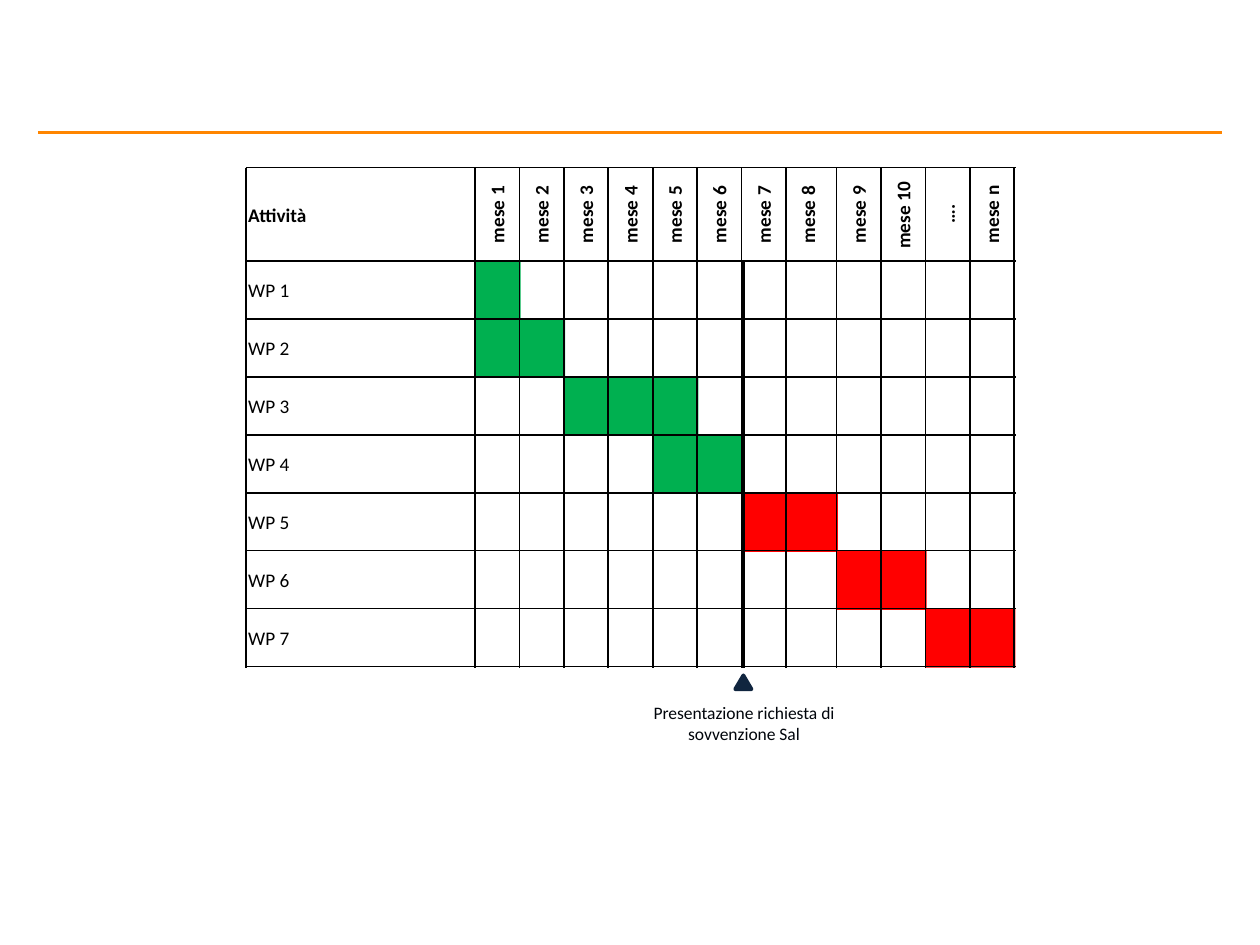
import pptx
import pptx.dml.color
import pptx.enum.shapes
import pptx.enum.text
import pptx.oxml.ns
import pptx.util
from lxml import etree

Inches = pptx.util.Inches
Pt = pptx.util.Pt
SHAPE = pptx.enum.shapes.MSO_SHAPE
ANCHOR = pptx.enum.text.MSO_ANCHOR
ALIGN = pptx.enum.text.PP_ALIGN
FIT = pptx.enum.text.MSO_AUTO_SIZE

COLORS = {
    "rule": "FF8500", "grid": "000000", "before": "00B050", "after": "FF0000",
    "marker": "10253F", "caption": "01050B", "paper": "FFFFFF",
}
FONT = "Calibri"
MONTHS = [f"mese {n}" for n in range(1, 11)] + ["….", "mese n"]
LABEL_LENGTHS = {"mese 10": 0.67, "….": 0.26}
# First and last month of each work package
SPANS = [(1, 1), (1, 2), (3, 5), (5, 6), (7, 8), (9, 10), (11, 12)]
REPORT_MONTH = 6
WIDE_MONTH, WIDE_EXTRA = 8, 0.05
ACTIVITY_WIDTH, HEADER_HEIGHT = 1.82, 0.74
HAIR = 0.01


def rgb(name):
    return pptx.dml.color.RGBColor.from_string(COLORS[name])


def set_font(paragraph, size, color, bold=False):
    font = paragraph.font
    font.name, font.size, font.bold = FONT, Pt(size), bold
    font.color.rgb = rgb(color)


def add_line(slide, start, end, color, weight):
    line = slide.shapes.add_connector(
        pptx.enum.shapes.MSO_CONNECTOR.STRAIGHT,
        *(Inches(value) for value in (*start, *end)))
    line.line.color.rgb = rgb(color)
    line.line.width = Pt(weight)
    etree.SubElement(line._element.spPr, pptx.oxml.ns.qn("a:effectLst"))


def add_filled(slide, preset, left, top, width, height, color):
    """Add a preset shape without outline or shadow."""
    shape = slide.shapes.add_shape(
        preset, Inches(left), Inches(top), Inches(width), Inches(height))
    shape.shadow.inherit = False
    shape.fill.solid()
    shape.fill.fore_color.rgb = rgb(color)
    shape.line.fill.background()
    return shape


def add_label(slide, text, center_x, center_y, length, bold=False, rotation=0):
    height = 0.26
    label = slide.shapes.add_textbox(
        Inches(center_x - length / 2), Inches(center_y - height / 2),
        Inches(length), Inches(height))
    label.rotation = rotation
    frame = label.text_frame
    frame.margin_left = frame.margin_right = frame.margin_top = frame.margin_bottom = 0
    frame.word_wrap = False
    frame.auto_size = FIT.SHAPE_TO_FIT_TEXT
    frame.text = text
    set_font(frame.paragraphs[0], 11, "grid", bold)


def add_bars(slide, columns, rows):
    for row, (first, last) in enumerate(SPANS):
        left = columns[first - 1]
        add_filled(slide, SHAPE.RECTANGLE, left, rows[row],
                   columns[last] - left + HAIR, rows[row + 1] - rows[row] + HAIR,
                   "before" if last <= REPORT_MONTH else "after")


def add_labels(slide, left, top, columns, rows):
    activity_length, package_length = 0.65, 0.44
    add_label(slide, "Attività", left + 0.02 + activity_length / 2, top + 0.41,
              activity_length, bold=True)
    for month, name in enumerate(MONTHS):
        add_label(slide, name, columns[month] + 0.21, top + 0.31,
                  LABEL_LENGTHS.get(name, 0.58), bold=True, rotation=270)
    for row in range(len(SPANS)):
        add_label(slide, f"WP {row + 1}", left + 0.02 + package_length / 2,
                  rows[row] + 0.27, package_length)


def add_grid(slide, left, top, columns, rows):
    right, bottom = columns[-1] + HAIR, rows[-1] + HAIR
    for y in [top, *rows]:
        add_line(slide, (left, y), (right, y), "grid", 1)
    for x in [left, *columns]:
        end = rows[0] if x == columns[REPORT_MONTH] else bottom
        add_line(slide, (x, top), (x, end), "grid", 1)
    report_x = columns[REPORT_MONTH] + HAIR
    add_line(slide, (report_x, rows[0]), (report_x, bottom), "grid", 2.25)


def add_gantt(slide, left, top, width, height):
    """Draw the schedule and return the x position of the report date."""
    month_width = (width - ACTIVITY_WIDTH - WIDE_EXTRA) / len(MONTHS)
    row_height = (height - HEADER_HEIGHT) / len(SPANS)
    columns = [left + ACTIVITY_WIDTH + month * month_width
               + (WIDE_EXTRA if month >= WIDE_MONTH else 0)
               for month in range(len(MONTHS) + 1)]
    rows = [top + HEADER_HEIGHT + row * row_height for row in range(len(SPANS) + 1)]
    add_bars(slide, columns, rows)
    add_labels(slide, left, top, columns, rows)
    add_grid(slide, left, top, columns, rows)
    return columns[REPORT_MONTH] + HAIR


def add_report_marker(slide, center, top):
    """Place the triangle and its caption under the report date."""
    triangle = add_filled(slide, SHAPE.ISOSCELES_TRIANGLE,
                          center - 0.06, top, 0.13, 0.11, "marker")
    triangle.line.color.rgb = rgb("marker")
    triangle.line.width = Pt(2.13)

    caption = add_filled(slide, SHAPE.RECTANGLE,
                         center - 0.81, top + 0.16, 1.64, 0.44, "paper")
    frame = caption.text_frame
    frame.word_wrap = True
    frame.vertical_anchor = ANCHOR.MIDDLE
    frame.text = "Presentazione richiesta di sovvenzione Sal"
    frame.paragraphs[0].alignment = ALIGN.CENTER
    set_font(frame.paragraphs[0], 10, "caption")


def main():
    deck = pptx.Presentation()
    deck.slide_width, deck.slide_height = Inches(10), Inches(7.5)
    slide = deck.slides.add_slide(deck.slide_layouts[6])
    add_line(slide, (0.3, 1.05), (9.7, 1.05), "rule", 2)
    report_x = add_gantt(slide, 1.95, 1.33, 6.1, 3.96)
    add_report_marker(slide, report_x, 5.36)
    deck.save("out.pptx")


if __name__ == "__main__":
    main()
